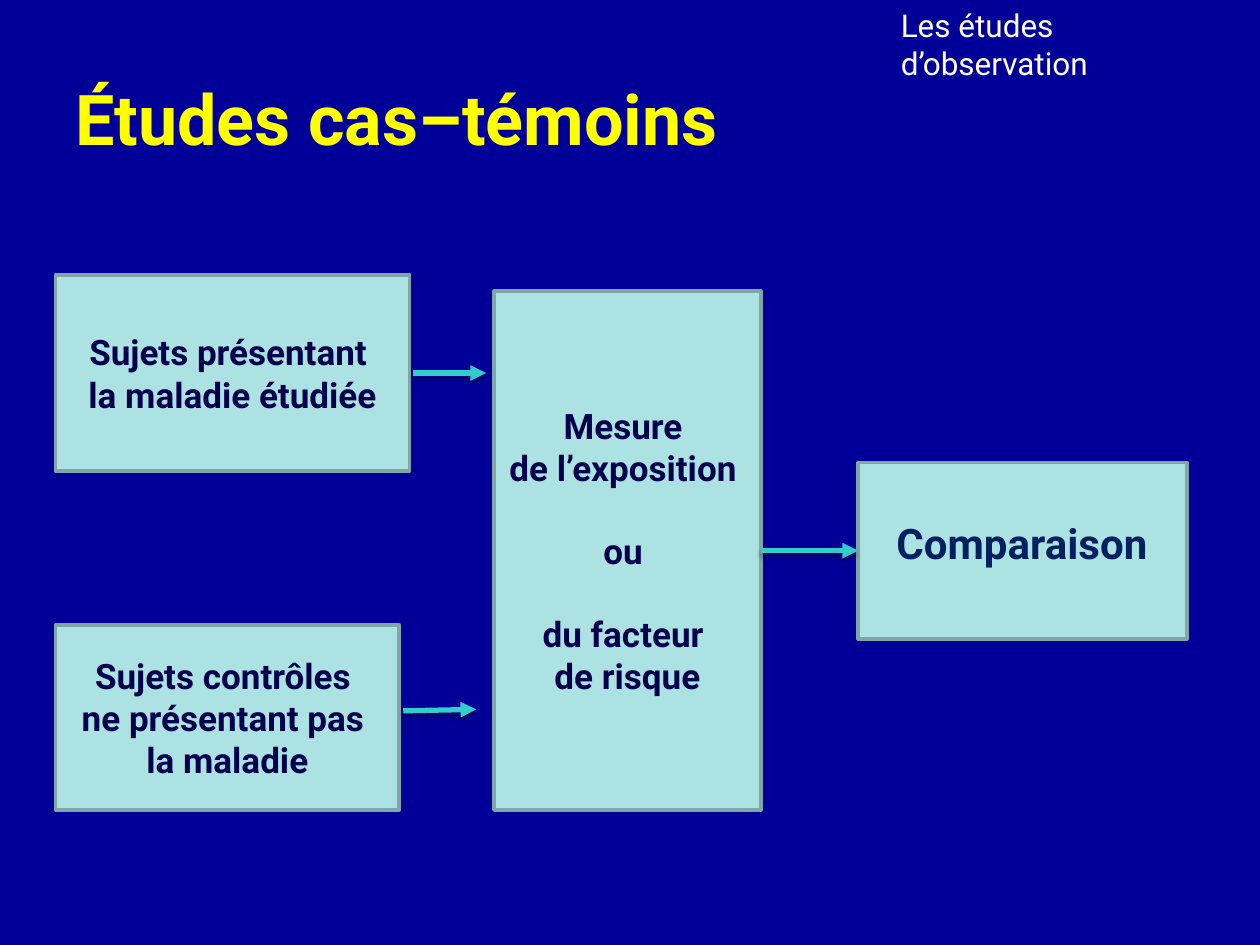
from lxml import etree
from pptx import Presentation
from pptx.dml.color import RGBColor
from pptx.enum.shapes import MSO_CONNECTOR, MSO_SHAPE
from pptx.enum.text import MSO_ANCHOR, PP_ALIGN
from pptx.oxml import parse_xml
from pptx.oxml.ns import nsdecls, qn
from pptx.util import Cm, Pt

RECTANGLE = MSO_SHAPE.RECTANGLE
STRAIGHT = MSO_CONNECTOR.STRAIGHT
TOP, MIDDLE = MSO_ANCHOR.TOP, MSO_ANCHOR.MIDDLE
LEFT, CENTER = PP_ALIGN.LEFT, PP_ALIGN.CENTER
LEFT_SIDE, RIGHT_SIDE = 1, 3
FONT = "Roboto"
COLORS = {
    "background": "000099", "white": "FFFFFF", "title": "FFFF00",
    "fill": "ADE2E2", "border": "80A7A7", "text": "00004C",
    "result": "002060", "arrow": "33CCCC", "shadow": "000000",
}
BLANK_LINE = Pt(23.4)


def color(name):
    """Return the named colour."""
    return RGBColor.from_string(COLORS[name])


def write(shape, lines, size, ink, bold=True, align=CENTER, anchor=MIDDLE,
          wrap=True, gaps=()):
    """Write one paragraph per line, with a blank line's space before each gap index."""
    frame = shape.text_frame
    frame.word_wrap = wrap
    frame.vertical_anchor = anchor
    for index, line in enumerate(lines):
        para = frame.paragraphs[0] if index == 0 else frame.add_paragraph()
        para.alignment = align
        para.space_before = BLANK_LINE if index in gaps else Pt(0)
        span = para.add_run()
        span.text = line
        for name, value in {"name": FONT, "size": Pt(size), "bold": bold}.items():
            setattr(span.font, name, value)
        span.font.color.rgb = color(ink)


def add_heading(page, left, top, width, height):
    """Add the section heading in the upper right corner."""
    box = page.shapes.add_textbox(Cm(left), Cm(top), Cm(width), Cm(height))
    box.text_frame.margin_right = Cm(0.8)
    write(box, ["Les études d’observation"], 18, "white", bold=False,
          align=LEFT, anchor=TOP)


def add_title(page, left, top, width, height):
    """Place the title in the upper part of its placeholder."""
    title = page.shapes.title
    bounds = {"left": left, "top": top, "width": width, "height": height}
    for name, value in bounds.items():
        setattr(title, name, Cm(value))
    title.text_frame.margin_bottom = Cm(1.78)
    write(title, ["Études cas–témoins"], 40, "title", align=LEFT)


def add_step(page, left, top, width, height, lines=(), gaps=()):
    """Add one bordered step of the diagram."""
    box = page.shapes.add_shape(RECTANGLE, Cm(left), Cm(top), Cm(width), Cm(height))
    box.shadow.inherit = False
    box.fill.solid()
    box.fill.fore_color.rgb = color("fill")
    box.line.color.rgb = color("border")
    box.line.width = Pt(2)
    write(box, lines, 20, "text", wrap=False, gaps=gaps)
    return box


def add_result(page, left, top, width, height):
    """Add the final step and its label."""
    box = add_step(page, left, top, width, height)
    label = page.shapes.add_textbox(
        Cm(left + 0.2), Cm(top + 0.99), Cm(width - 0.43), Cm(1.27))
    write(label, ["Comparaison"], 24, "result", anchor=TOP)
    return box


def add_arrow(page, start=(0, 0), end=(0, 0)):
    """Add an arrow with a soft shadow below it."""
    arrow = page.shapes.add_connector(STRAIGHT, *map(Cm, (*start, *end)))
    arrow.line.color.rgb = color("arrow")
    arrow.line.width = Pt(3)
    etree.SubElement(arrow.line._get_or_add_ln(), qn("a:tailEnd"), type="triangle")
    arrow._element.spPr.append(parse_xml(
        f'<a:effectLst {nsdecls("a")}>'
        f'<a:outerShdw blurRad="{Pt(3.1)}" dist="{Pt(1.8)}" dir="5400000" rotWithShape="0">'
        f'<a:srgbClr val="{COLORS["shadow"]}"><a:alpha val="35000"/></a:srgbClr>'
        '</a:outerShdw></a:effectLst>'))
    return arrow


def add_diagram(page, left, top):
    """Add the case-control diagram from its upper left corner."""
    add_step(page, left, top, 7.14, 3.96,
             ["Sujets présentant ", "la maladie étudiée"])
    add_step(page, left, top + 7.06, 6.93, 3.73,
             ["Sujets contrôles ", "ne présentant pas ", "la maladie"])
    measure = add_step(
        page, left + 8.84, top + 0.33, 5.38, 10.46,
        ["Mesure ", "de l’exposition ", "ou ", "du facteur ", "de risque"],
        gaps=(2, 3))
    result = add_result(page, left + 16.18, top + 3.78, 6.63, 3.56)
    add_arrow(page, (left + 7.21, top + 1.98), (left + 8.68, top + 1.98))
    add_arrow(page, (left + 7.01, top + 8.79), (left + 8.48, top + 8.76))
    comparison = add_arrow(page)
    comparison.begin_connect(measure, RIGHT_SIDE)
    comparison.end_connect(result, LEFT_SIDE)


def main():
    """Build and save the slide."""
    deck = Presentation()
    deck.slide_width, deck.slide_height = Cm(25.4), Cm(19.05)
    page = deck.slides.add_slide(deck.slide_layouts.get_by_name("Title Only"))
    page.background.fill.solid()
    page.background.fill.fore_color.rgb = color("background")
    add_heading(page, 17.91, 0, 7.49, 1.02)
    add_title(page, 1.27, 1.27, 22.86, 3.84)
    add_diagram(page, 1.12, 5.54)
    deck.save("out.pptx")


if __name__ == "__main__":
    main()
